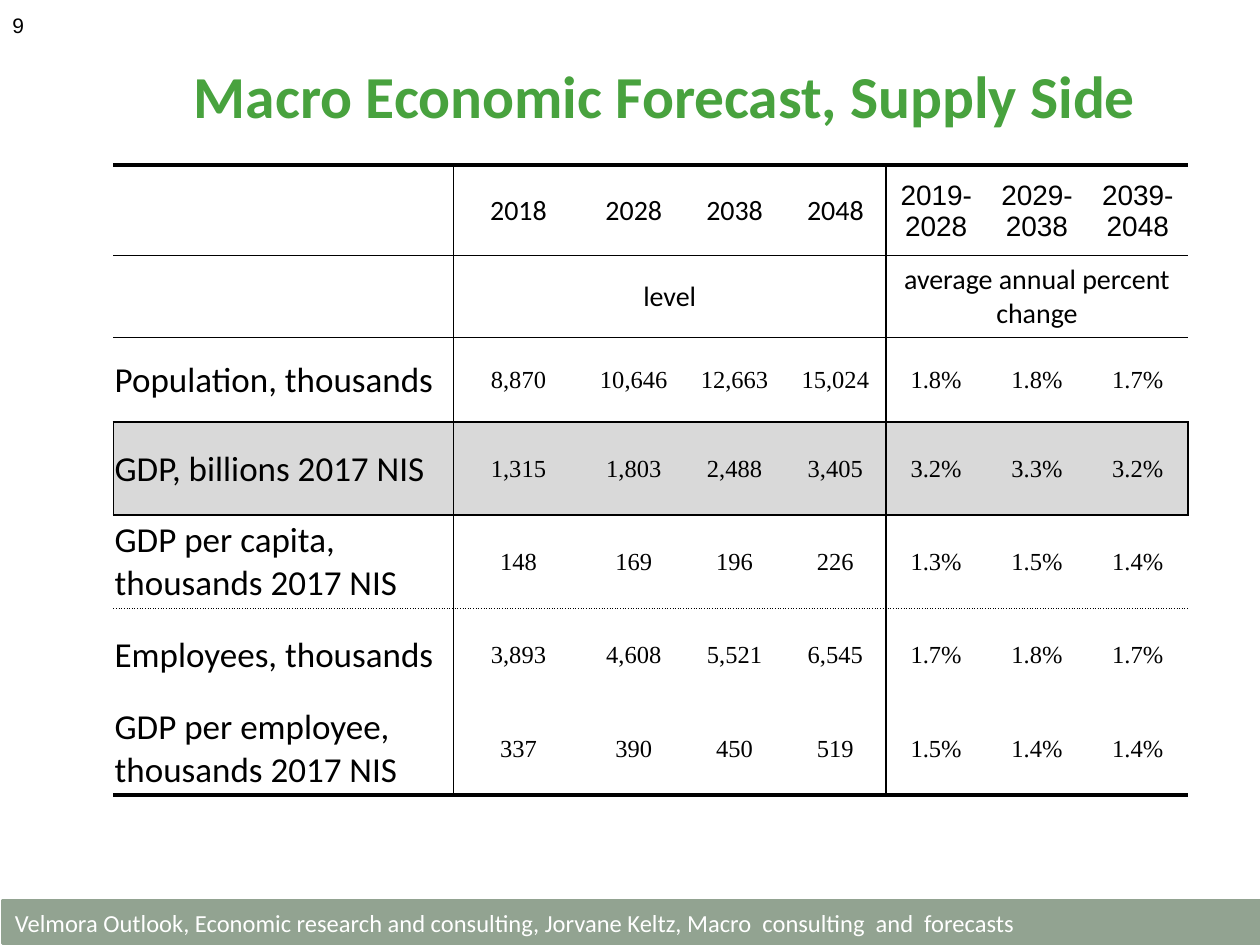
from dataclasses import dataclass

from lxml import etree
from pptx import Presentation
from pptx.dml.color import RGBColor
from pptx.enum.shapes import MSO_SHAPE as Shape
from pptx.enum.text import MSO_ANCHOR as Anchor, PP_ALIGN as Align
from pptx.oxml.ns import qn
from pptx.util import Inches, Pt


@dataclass(frozen=True)
class Theme:
    heading: str = "48A23E"
    ink: str = "000000"
    paper: str = "FFFFFF"
    highlight: str = "D9D9D9"
    band: str = "92A391"
    font: str = "Calibri"
    figure_font: str = "Times New Roman"
    rtl_font: str = "Arial"
    title_size: float = 34
    label_size: float = 20
    header_size: float = 16
    small_size: float = 14
    number_size: float = 12


THIN, THICK = (1, "solid"), (2.25, "solid")
DOTTED = (1, "sysDot")
COLUMN_WIDTHS = [2.7] + [1.03] + [0.8] * 6
ROW_HEIGHTS = [0.72, 0.65, 0.67] + [0.74] * 4
ROW_EDGES = [THICK, THIN, THIN, THIN, THIN, DOTTED, None, THICK]
COLUMN_DIVIDERS = {1, 5}
PERIOD_START = 5
HIGHLIGHT_ROW = 3
MERGES = [(1, 1, 4), (1, 5, 7)]
FORECAST = [
    ["", "2018", "2028", "2038", "2048", "2019-2028", "2029-2038", "2039-2048"],
    ["", "level", "", "", "", "average annual percent change", "", ""],
    ["Population, thousands", "8,870", "10,646", "12,663", "15,024", "1.8%", "1.8%", "1.7%"],
    ["GDP, billions 2017 NIS", "1,315", "1,803", "2,488", "3,405", "3.2%", "3.3%", "3.2%"],
    ["GDP per capita, thousands 2017 NIS", "148", "169", "196", "226", "1.3%", "1.5%", "1.4%"],
    ["Employees, thousands", "3,893", "4,608", "5,521", "6,545", "1.7%", "1.8%", "1.7%"],
    ["GDP per employee, thousands 2017 NIS", "337", "390", "450", "519", "1.5%", "1.4%", "1.4%"],
]


class ForecastSlide:
    def __init__(self, deck, theme):
        self.theme = theme
        self.slide = deck.slides.add_slide(deck.slide_layouts[5])

    def style(self, frame, size, color, font=None, bold=False, align=None, rtl=False):
        for paragraph in frame.paragraphs:
            paragraph.alignment = align
            if rtl:
                paragraph._p.get_or_add_pPr().set("rtl", "1")
            for run in paragraph.runs:
                run.font.size = Pt(size)
                run.font.name = font or self.theme.font
                run.font.bold = bold
                run.font.color.rgb = RGBColor.from_string(color)
                if rtl:
                    complex_font = etree.SubElement(run._r.get_or_add_rPr(), qn("a:cs"))
                    complex_font.set("typeface", self.theme.rtl_font)

    def title(self, text, box):
        heading = self.slide.shapes.title
        heading.left, heading.top, heading.width, heading.height = map(Inches, box)
        heading.text_frame.text = text
        heading.text_frame.vertical_anchor = Anchor.MIDDLE
        self.style(heading.text_frame, self.theme.title_size, self.theme.heading,
                   bold=True, align=Align.CENTER)

    def page_number(self, text, box):
        frame = self.slide.shapes.add_textbox(*map(Inches, box)).text_frame
        frame.word_wrap = True
        frame.vertical_anchor = Anchor.MIDDLE
        frame.text = text
        self.style(frame, self.theme.number_size, self.theme.ink, align=Align.LEFT, rtl=True)

    def footer(self, text, box):
        band = self.slide.shapes.add_shape(Shape.RECTANGLE, *map(Inches, box))
        band.shadow.inherit = False
        band.fill.solid()
        band.fill.fore_color.rgb = RGBColor.from_string(self.theme.band)
        band.line.color.rgb = RGBColor.from_string(self.theme.band)
        band.line.width = Pt(2)
        band.text_frame.text = text
        band.text_frame.vertical_anchor = Anchor.MIDDLE
        self.style(band.text_frame, self.theme.small_size, self.theme.paper, align=Align.LEFT)

    def border(self, cell, side, edge):
        line = etree.SubElement(cell._tc.get_or_add_tcPr(), qn(f"a:ln{side}"))
        if edge is None:
            etree.SubElement(line, qn("a:noFill"))
            return
        width, dash = edge
        line.set("w", str(Pt(width)))
        fill = etree.SubElement(line, qn("a:solidFill"))
        etree.SubElement(fill, qn("a:srgbClr")).set("val", self.theme.ink)
        etree.SubElement(line, qn("a:prstDash")).set("val", dash)

    def cell(self, cell, text, row, column):
        dividers = COLUMN_DIVIDERS
        if row == HIGHLIGHT_ROW:
            dividers = dividers | {0, len(COLUMN_WIDTHS)}
        edges = {
            "L": THIN if column in dividers else None,
            "R": THIN if column + 1 in dividers else None,
            "T": ROW_EDGES[row],
            "B": ROW_EDGES[row + 1],
        }
        for side, edge in edges.items():
            self.border(cell, side, edge)
        cell.fill.solid()
        background = self.theme.highlight if row == HIGHLIGHT_ROW else self.theme.paper
        cell.fill.fore_color.rgb = RGBColor.from_string(background)
        cell.margin_left = cell.margin_right = cell.margin_top = Inches(0.01)
        cell.margin_bottom = 0
        cell.vertical_anchor = Anchor.MIDDLE
        cell.text_frame.text = text
        if row < 2:
            size, font = self.theme.header_size, self.theme.font
        elif column == 0:
            size, font = self.theme.label_size, self.theme.font
        else:
            size, font = self.theme.small_size, self.theme.figure_font
        self.style(cell.text_frame, size, self.theme.ink, font,
                   align=Align.CENTER if column else Align.LEFT,
                   rtl=row == 0 and column >= PERIOD_START)

    def table(self, records, left, top):
        frame = self.slide.shapes.add_table(
            len(ROW_HEIGHTS), len(COLUMN_WIDTHS), Inches(left), Inches(top),
            Inches(sum(COLUMN_WIDTHS)), Inches(sum(ROW_HEIGHTS)))
        table = frame.table
        table.first_row = table.horz_banding = False
        for column, width in zip(table.columns, COLUMN_WIDTHS):
            column.width = Inches(width)
        for row, height in zip(table.rows, ROW_HEIGHTS):
            row.height = Inches(height)
        for row, record in enumerate(records):
            for column, text in enumerate(record):
                self.cell(table.cell(row, column), text, row, column)
        for row, first, last in MERGES:
            table.cell(row, first).merge(table.cell(row, last))


def main():
    deck = Presentation()
    deck.slide_width, deck.slide_height = Inches(10), Inches(7.5)
    forecast = ForecastSlide(deck, Theme())
    forecast.footer("Velmora Outlook, Economic research and consulting, Jorvane Keltz, "
                    "Macro  consulting  and  forecasts", (0.02, 7.15, 10.01, 0.34))
    forecast.title("Macro Economic Forecast, Supply Side", (1.14, 0.15, 8.27, 1.2))
    forecast.page_number("9", (0, 0, 2.33, 0.4))
    forecast.table(FORECAST, 0.9, 1.31)
    deck.save("out.pptx")


if __name__ == "__main__":
    main()
